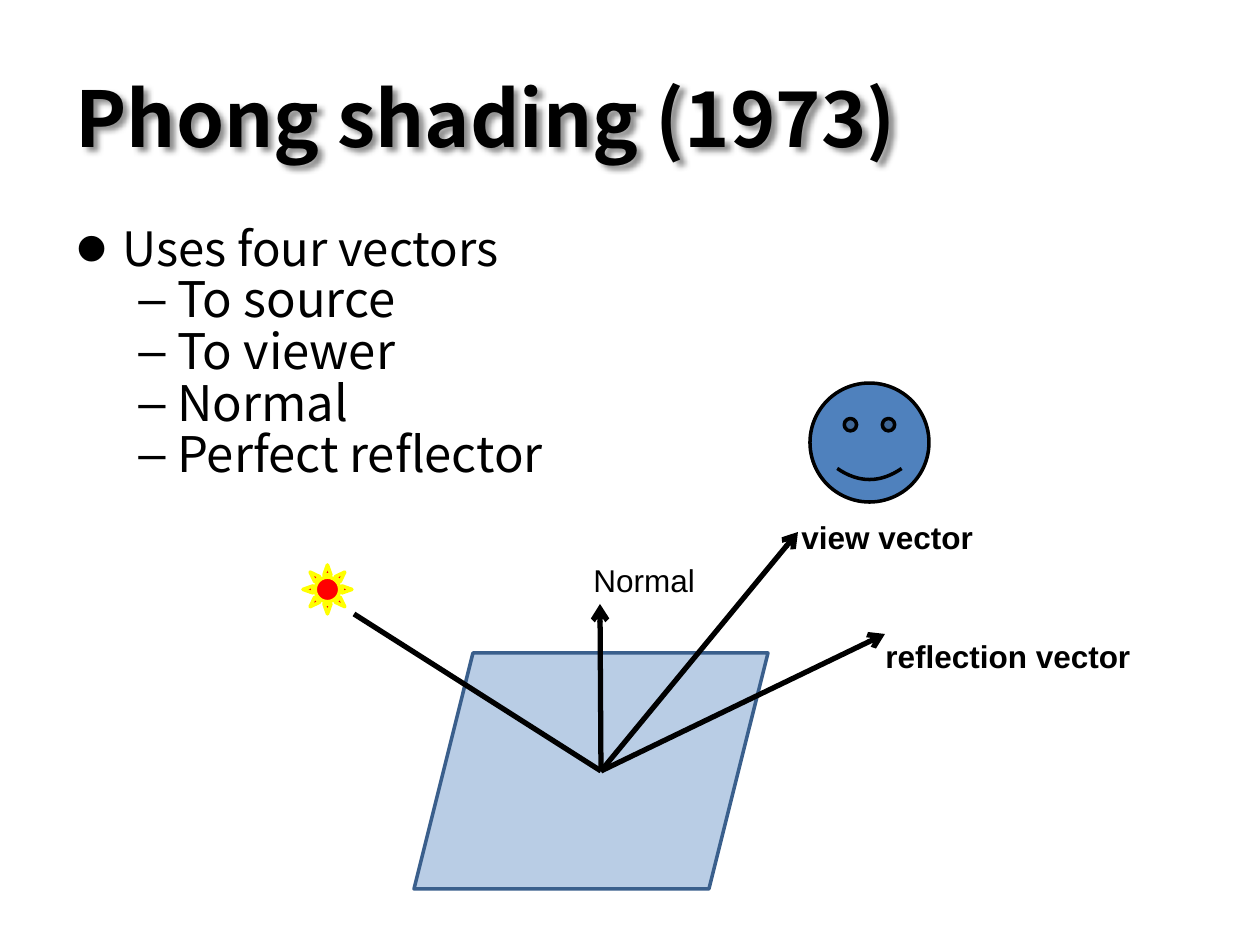
from lxml import etree
from pptx import Presentation
from pptx.dml.color import RGBColor
from pptx.enum.shapes import MSO_CONNECTOR, MSO_SHAPE
from pptx.enum.text import MSO_ANCHOR, PP_ALIGN
from pptx.oxml.ns import qn
from pptx.util import Pt

PX = 914400 // 126
BLACK = RGBColor(0, 0, 0)
PALE_BLUE = RGBColor(0xB9, 0xCD, 0xE5)
EDGE_BLUE = RGBColor(0x3A, 0x5F, 0x8C)
FACE_BLUE = RGBColor(0x4F, 0x81, 0xBD)
RED = RGBColor(0xFF, 0, 0)
YELLOW = RGBColor(0xFF, 0xFF, 0)
HEADING_FONT = "Noto Sans CJK SC"
LABEL_FONT = "Arial"


def add_xml(parent, tag, **attributes):
    return etree.SubElement(parent, qn(tag), attributes)


def style(font, name, size, bold=False):
    font.name, font.size, font.bold = name, Pt(size), bold
    font.color.rgb = BLACK


deck = Presentation()
deck.slide_width, deck.slide_height = 1260 * PX, 945 * PX
page = deck.slides.add_slide(deck.slide_layouts[5])

# Title with a soft shadow
title = page.shapes.title
title.left, title.top, title.width, title.height = 63 * PX, 38 * PX, 905 * PX, 157 * PX
title.text_frame.vertical_anchor = MSO_ANCHOR.MIDDLE
para = title.text_frame.paragraphs[0]
para.text = "Phong shading (1973)"
para.alignment = PP_ALIGN.LEFT
style(para.font, HEADING_FONT, 44, True)
effects = add_xml(title.element.spPr, "a:effectLst")
shadow = add_xml(effects, "a:outerShdw", blurRad="38100", dist="38100", dir="2700000", algn="tl")
shadow_color = add_xml(shadow, "a:srgbClr", val="000000")
add_xml(shadow_color, "a:alpha", val="43000")

# Bulleted list: text, level, size, left margin, indent, bullet, bullet size in percent
body = page.shapes.add_textbox(63 * PX, 220 * PX, 1134 * PX, 624 * PX)
frame = body.text_frame
frame.word_wrap = True
items = [("Uses four vectors", 0, 27, 47, -47, "•", 200)]
for name in ("To source", "To viewer", "Normal", "Perfect reflector"):
    items.append((name, 1, 28, 102, -39, "–", 100))
for index, (text, level, size, margin, indent, bullet, percent) in enumerate(items):
    para = frame.add_paragraph() if index else frame.paragraphs[0]
    para.text = text
    para.level = level
    para.line_spacing = 0.88
    properties = para._p.get_or_add_pPr()
    properties.set("marL", str(margin * PX))
    properties.set("indent", str(indent * PX))
    add_xml(properties, "a:buSzPct", val=str(percent * 1000))
    add_xml(properties, "a:buFont", typeface=LABEL_FONT)
    add_xml(properties, "a:buChar", char=bullet)
    style(para.font, HEADING_FONT, size)

# Surface, viewer and light source
for kind, left, top, width, height, fill, edge in (
    (MSO_SHAPE.PARALLELOGRAM, 414, 653, 354, 236, PALE_BLUE, EDGE_BLUE),
    (MSO_SHAPE.SMILEY_FACE, 810, 383, 119, 119, FACE_BLUE, BLACK),
    (MSO_SHAPE.SUN, 303, 565, 49, 49, RED, YELLOW),
):
    shape = page.shapes.add_shape(kind, left * PX, top * PX, width * PX, height * PX)
    shape.shadow.inherit = False
    shape.fill.solid()
    shape.fill.fore_color.rgb = fill
    shape.line.color.rgb = edge
    shape.line.width = Pt(2)

# Vectors from the lit point
for x, y, has_arrow in ((885, 634, True), (354, 614, False), (600, 604, True), (798, 532, True)):
    vector = page.shapes.add_connector(
        MSO_CONNECTOR.STRAIGHT, 601 * PX, 771 * PX, x * PX, y * PX)
    vector.line.color.rgb = BLACK
    vector.line.width = Pt(3)
    add_xml(vector._element.spPr, "a:effectLst")
    if has_arrow:
        add_xml(vector.line._get_or_add_ln(), "a:tailEnd", type="arrow")

# Vector labels
for text, left, top, width, bold in (
    ("Normal", 581, 555, 149, False),
    ("reflection vector", 873, 631, 273, True),
    ("view vector", 789, 512, 199, True),
):
    box = page.shapes.add_textbox(left * PX, top * PX, width * PX, 50 * PX)
    box.text_frame.word_wrap = not bold
    para = box.text_frame.paragraphs[0]
    para.text = text
    style(para.font, LABEL_FONT, 18, bold)

deck.save("out.pptx")
